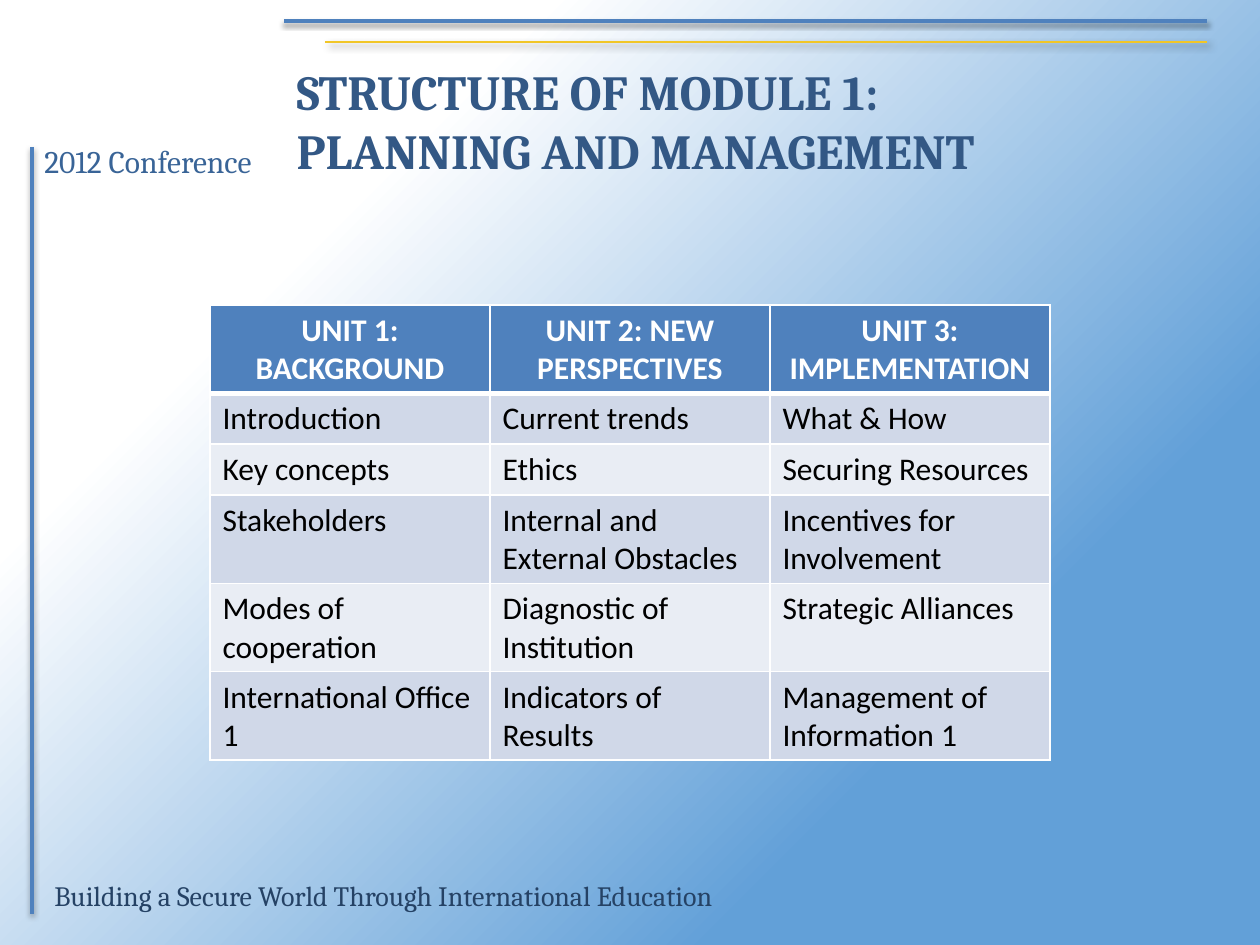
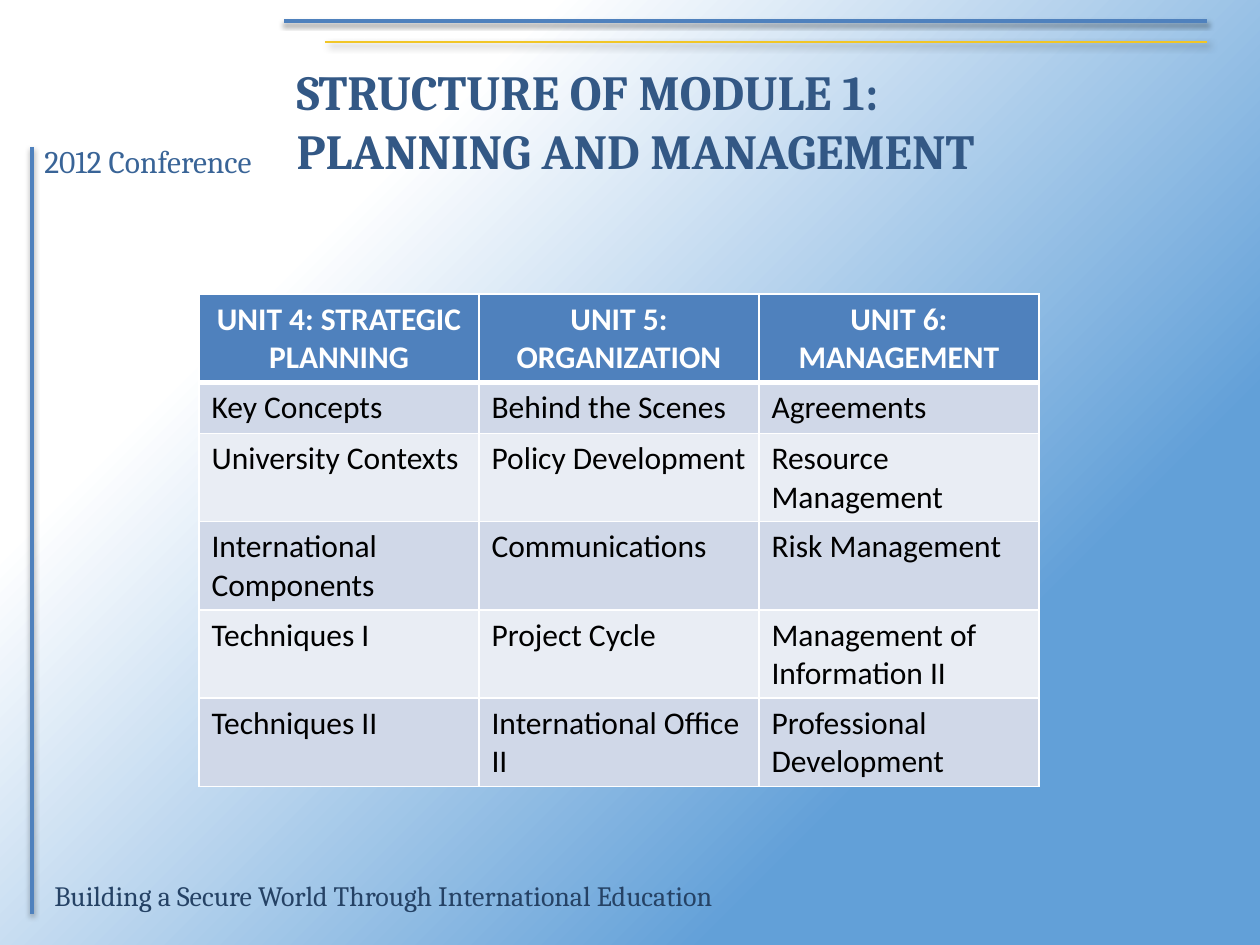
"""Build two slides that outline the units of a training module."""
from pptx import Presentation
from pptx.dml.color import RGBColor
from pptx.enum.shapes import MSO_CONNECTOR
from pptx.enum.text import MSO_ANCHOR, MSO_AUTO_SIZE, PP_ALIGN
from pptx.oxml import parse_xml
from pptx.oxml.ns import nsdecls
from pptx.util import Emu, Pt

BLUE = RGBColor(0x4F, 0x81, 0xBD)
GOLD = RGBColor(0xF1, 0xC6, 0x27)
SKY = RGBColor(0x62, 0xA0, 0xD8)
WHITE = RGBColor(0xFF, 0xFF, 0xFF)
BLACK = RGBColor(0, 0, 0)
NAVY = RGBColor(0x33, 0x58, 0x85)
STEEL = RGBColor(0x39, 0x64, 0x97)
DEEP = RGBColor(0x25, 0x42, 0x65)
BANDS = [RGBColor(0xE9, 0xED, 0xF4), RGBColor(0xD0, 0xD8, 0xE8)]

TITLE = "STRUCTURE OF MODULE 1: \vPLANNING AND MANAGEMENT"
UNITS = [
    ((210, 305), [
        ("UNIT 1:\nBACKGROUND", "UNIT 2: NEW PERSPECTIVES", "UNIT 3: IMPLEMENTATION"),
        ("Introduction", "Current trends", "What & How"),
        ("Key concepts", "Ethics", "Securing Resources"),
        ("Stakeholders", "Internal and External Obstacles", "Incentives for Involvement"),
        ("Modes of cooperation", "Diagnostic of Institution", "Strategic Alliances"),
        ("International Office 1", "Indicators of Results", "Management of Information 1"),
    ]),
    ((199, 294), [
        ("UNIT 4: STRATEGIC PLANNING", "UNIT 5: ORGANIZATION", "UNIT 6: MANAGEMENT"),
        ("Key Concepts", "Behind the Scenes", "Agreements"),
        ("University Contexts", "Policy Development", "Resource Management"),
        ("International Components", "Communications", "Risk Management"),
        ("Techniques I", "Project Cycle", "Management of Information II"),
        ("Techniques II", "International Office II", "Professional Development"),
    ]),
]
SOFT = dict(blur=3.1, dist=1.6, turn=90, alpha=38)
HARD = dict(blur=4, dist=3, turn=45, alpha=40)
RULES = [
    ((32, 147, 32, 914), BLUE, 2, SOFT),
    ((1207, 21, 284, 21), BLUE, 2, SOFT),
    ((1207, 42, 325, 42), GOLD, 1.5, HARD),
]
LABELS = [
    ((32, 136, 262, 50), "2012 Conference", 18, STEEL),
    ((42, 872, 1018, 47), "Building a Secure World Through International Education", 16, DEEP),
]
COL, ROW = 280, 51


def px(*nums):
    return [Emu(round(num * 914400 / 126)) for num in nums]


def write(frame, text, size=18, font="Cambria", color=BLACK, bold=False, align=PP_ALIGN.LEFT):
    frame.text = text
    frame.word_wrap = True
    for para in frame.paragraphs:
        para.alignment = align
        for run in para.runs:
            run.font.size, run.font.name, run.font.bold = Pt(size), font, bold
            run.font.color.rgb = color


def paint(master):
    fill = master.background.fill
    fill.gradient()
    for stop, color, pos in zip(fill.gradient_stops, (SKY, WHITE), (0.25, 0.75)):
        stop.color.rgb, stop.position = color, pos
    lin = master.element.xpath(".//p:bgPr//a:lin")[0]
    lin.getparent().replace(lin, parse_xml(
        f'<a:path {nsdecls("a")} path="circle"><a:fillToRect l="100000" t="100000"/></a:path>'))


def rule(slide, ends, color, width, shade):
    line = slide.shapes.add_connector(MSO_CONNECTOR.STRAIGHT, *px(*ends))
    line.line.color.rgb, line.line.width = color, Pt(width)
    line.element.spPr.append(parse_xml(
        f'<a:effectLst {nsdecls("a")}><a:outerShdw blurRad="{Pt(shade["blur"])}" '
        f'dist="{Pt(shade["dist"])}" dir="{shade["turn"] * 60000}" rotWithShape="0">'
        f'<a:srgbClr val="{BLACK}"><a:alpha val="{shade["alpha"] * 1000}"/></a:srgbClr>'
        '</a:outerShdw></a:effectLst>'))


def edge(cell, side, width):
    cell._tc.get_or_add_tcPr().append(parse_xml(
        f'<a:ln{side} {nsdecls("a")} w="{Pt(width)}"><a:solidFill>'
        f'<a:srgbClr val="{WHITE}"/></a:solidFill></a:ln{side}>'))


def grid(slide, spot, rows):
    many, wide = len(rows), len(rows[0])
    table = slide.shapes.add_table(many, wide, *px(*spot, wide * COL, many * ROW)).table
    table.horz_banding = False
    for r, row in enumerate(rows):
        head = r == 0
        for c, text in enumerate(row):
            cell = table.cell(r, c)
            write(cell.text_frame, text, font="Calibri", bold=head,
                  color=WHITE if head else BLACK,
                  align=PP_ALIGN.CENTER if head else PP_ALIGN.LEFT)
            for side in "LRTB":
                edge(cell, side, 3 if (r, side) in ((0, "B"), (1, "T")) else 1)
            cell.fill.solid()
            cell.fill.fore_color.rgb = BLUE if head else BANDS[r % 2]


def build(deck, spot, rows):
    slide = deck.slides.add_slide(deck.slide_layouts[5])
    for spec in RULES:
        rule(slide, *spec)
    for box, text, size, color in LABELS:
        frame = slide.shapes.add_textbox(*px(*box)).text_frame
        write(frame, text, size=size, color=color)
        frame.auto_size = MSO_AUTO_SIZE.SHAPE_TO_FIT_TEXT
    title = slide.shapes.title
    title.left, title.top, title.width, title.height = px(284, 42, 1134, 157)
    write(title.text_frame, TITLE, size=28, color=NAVY, bold=True)
    title.text_frame.auto_size = MSO_AUTO_SIZE.NONE
    title.text_frame.vertical_anchor = MSO_ANCHOR.MIDDLE
    grid(slide, spot, rows)


def main():
    deck = Presentation()
    deck.slide_width, deck.slide_height = px(1260, 945)
    paint(deck.slide_master)
    for spot, rows in UNITS:
        build(deck, spot, rows)
    deck.save("out.pptx")


if __name__ == "__main__":
    main()
